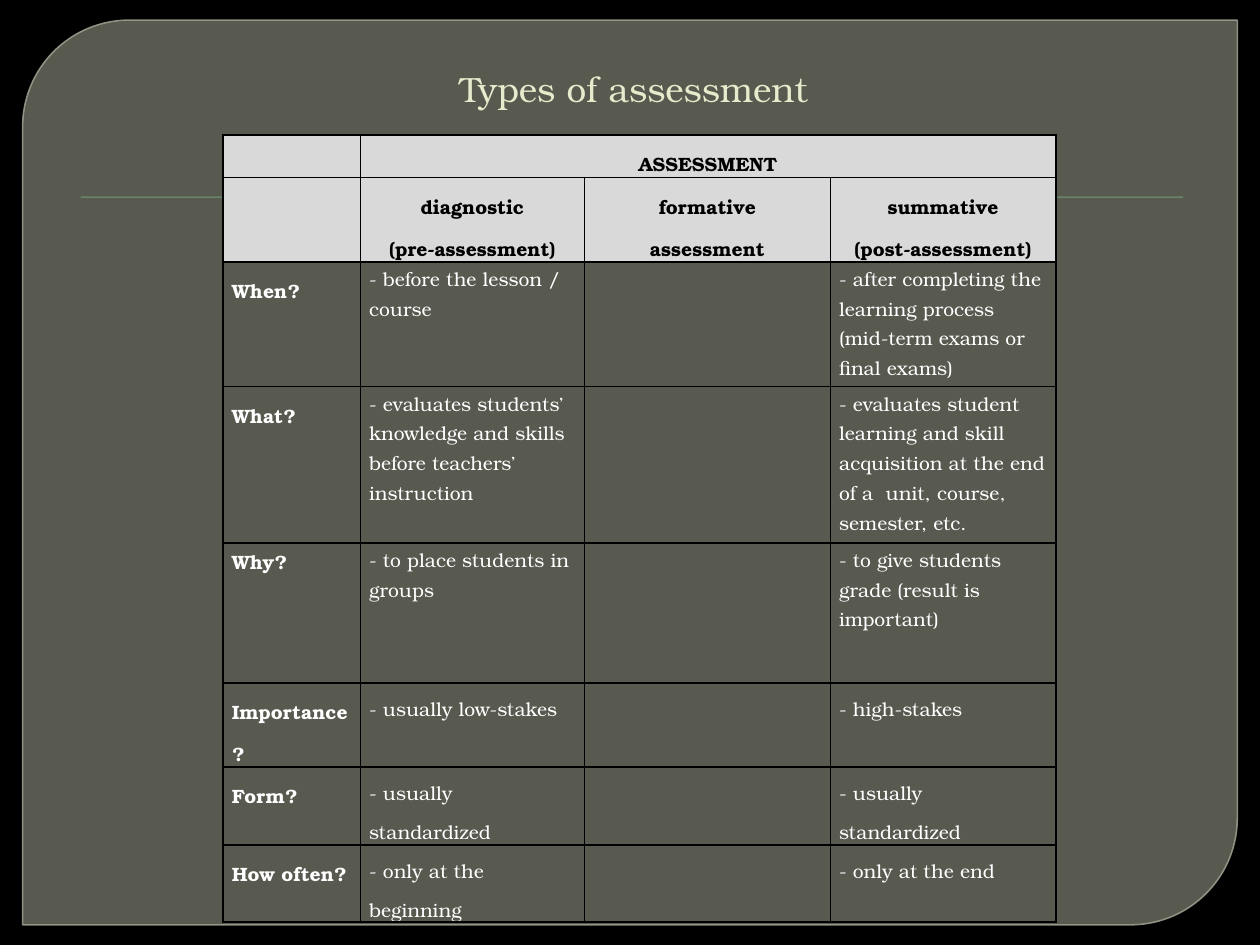
from pptx import Presentation
from pptx.dml.color import RGBColor
from pptx.enum.shapes import MSO_SHAPE as SHAPE
from pptx.enum.text import MSO_ANCHOR as ANCHOR, PP_ALIGN as ALIGN
from pptx.oxml import parse_xml
from pptx.oxml.ns import nsdecls, qn
from pptx.util import Inches, Pt
from lxml import etree

FONT = "TeX Gyre Bonum"
COLORS = {
    "background": "000000", "panel": "888B7B", "panel_line": "9DA090",
    "rule": "72A376", "title": "E7EACB", "header": "D9D9D9",
    "header_text": "000000", "body_text": "FFFFFF", "border": "000000",
}
COL_WIDTHS = [1.09, 1.78, 1.95, 1.79]
ROW_HEIGHTS = [0.34, 0.67, 0.99, 1.24, 1.11, 0.67, 0.62, 0.61]
HEADINGS = [
    "diagnostic\n(pre-assessment)",
    "formative\nassessment",
    "summative\n(post-assessment)",
]
# question, diagnostic, summative, spacing of the question, spacing of the answers
ROWS = [
    ("When?", "- before the lesson / course",
     "- after completing the learning process (mid-term exams or final exams)", 1.5, 1.15),
    ("What?", "- evaluates students’ knowledge and skills before teachers’ instruction",
     "- evaluates student learning and skill acquisition at the end of a  unit, course, "
     "semester, etc.", 1.5, 1.15),
    ("Why?", "- to place students in groups",
     "- to give students grade (result is important)", 1.15, 1.15),
    ("Importance?", "- usually low-stakes", "- high-stakes", 1.5, 1.5),
    ("Form?", "- usually standardized", "- usually standardized", 1.5, 1.5),
    ("How often?", "- only at the beginning", "- only at the end", 1.5, 1.5),
]


def rgb(name):
    return RGBColor.from_string(COLORS[name])


def set_alpha(fill, percent):
    """Make a solid fill partly transparent."""
    color = fill._xPr.find(qn("a:solidFill"))[0]
    etree.SubElement(color, qn("a:alpha")).set("val", str(percent * 1000))


def style_paragraph(p, size, color, bold=False, align=ALIGN.LEFT):
    p.alignment = align
    p.font.name, p.font.size, p.font.bold = FONT, Pt(size), bold
    p.font.color.rgb = rgb(color)


def add_panel(s):
    sp = s.shapes.add_shape(SHAPE.ROUND_2_DIAG_RECTANGLE,
                            Inches(0.18), Inches(0.16), Inches(9.64), Inches(7.18))
    sp.adjustments[0], sp.adjustments[1] = 0.118, 0
    sp.shadow.inherit = False
    sp.fill.solid()
    sp.fill.fore_color.rgb = rgb("panel")
    set_alpha(sp.fill, 65)
    sp.line.color.rgb = rgb("panel_line")
    sp.line.width = Pt(0.87)
    set_alpha(sp.line.fill, 88)


def add_rule(s):
    sp = s.shapes.add_shape(SHAPE.RECTANGLE,
                            Inches(0.64), Inches(1.56), Inches(8.75), Inches(0.01))
    sp.shadow.inherit = False
    sp.fill.solid()
    sp.fill.fore_color.rgb = rgb("rule")
    sp.line.fill.background()


def add_title(s, text):
    tf = s.shapes.add_textbox(Inches(0.53), Inches(0.28), Inches(9), Inches(0.64)).text_frame
    tf.word_wrap = True
    tf.vertical_anchor = ANCHOR.BOTTOM
    tf.text = text
    style_paragraph(tf.paragraphs[0], 20, "title", align=ALIGN.CENTER)


def set_borders(cell):
    tc_pr = cell._tc.get_or_add_tcPr()
    for i, side in enumerate(("lnL", "lnR", "lnT", "lnB")):
        tc_pr.insert(i, parse_xml(
            f'<a:{side} {nsdecls("a")} w="12700"><a:solidFill>'
            f'<a:srgbClr val="{COLORS["border"]}"/></a:solidFill></a:{side}>'))


def write_cell(cell, text, spacing, before=12, **style):
    cell.text = text
    for p in cell.text_frame.paragraphs:
        p.line_spacing = spacing
        p.space_before = Pt(before)
        style_paragraph(p, 11, **style)


def add_assessment_table(s):
    table = s.shapes.add_table(len(ROW_HEIGHTS), len(COL_WIDTHS), Inches(1.77), Inches(1.07),
                               Inches(sum(COL_WIDTHS)), Inches(sum(ROW_HEIGHTS))).table
    for column, width in zip(table.columns, COL_WIDTHS):
        column.width = Inches(width)
    for r, height in enumerate(ROW_HEIGHTS):
        table.rows[r].height = Inches(height)
        for cell in table.rows[r].cells:
            cell.margin_left = cell.margin_right = Inches(0.07)
            cell.margin_top = cell.margin_bottom = 0
            if r < 2:
                cell.fill.solid()
                cell.fill.fore_color.rgb = rgb("header")
            else:
                cell.fill.background()
            set_borders(cell)

    header = {"color": "header_text", "bold": True, "align": ALIGN.CENTER}
    table.cell(0, 1).merge(table.cell(0, 3))
    write_cell(table.cell(0, 1), "ASSESSMENT", 1.5, **header)
    for c, heading in enumerate(HEADINGS, 1):
        write_cell(table.cell(1, c), heading, 1.5, before=0, **header)
    for r, (question, diagnostic, summative, label_spacing, spacing) in enumerate(ROWS, 2):
        write_cell(table.cell(r, 0), question, label_spacing, color="body_text", bold=True)
        write_cell(table.cell(r, 1), diagnostic, spacing, color="body_text")
        write_cell(table.cell(r, 3), summative, spacing, color="body_text")


def main():
    prs = Presentation()
    prs.slide_width, prs.slide_height = Inches(10), Inches(7.5)
    s = prs.slides.add_slide(prs.slide_layouts[6])
    s.background.fill.solid()
    s.background.fill.fore_color.rgb = rgb("background")
    add_panel(s)
    add_rule(s)
    add_title(s, "Types of assessment")
    add_assessment_table(s)
    prs.save("out.pptx")


if __name__ == "__main__":
    main()
